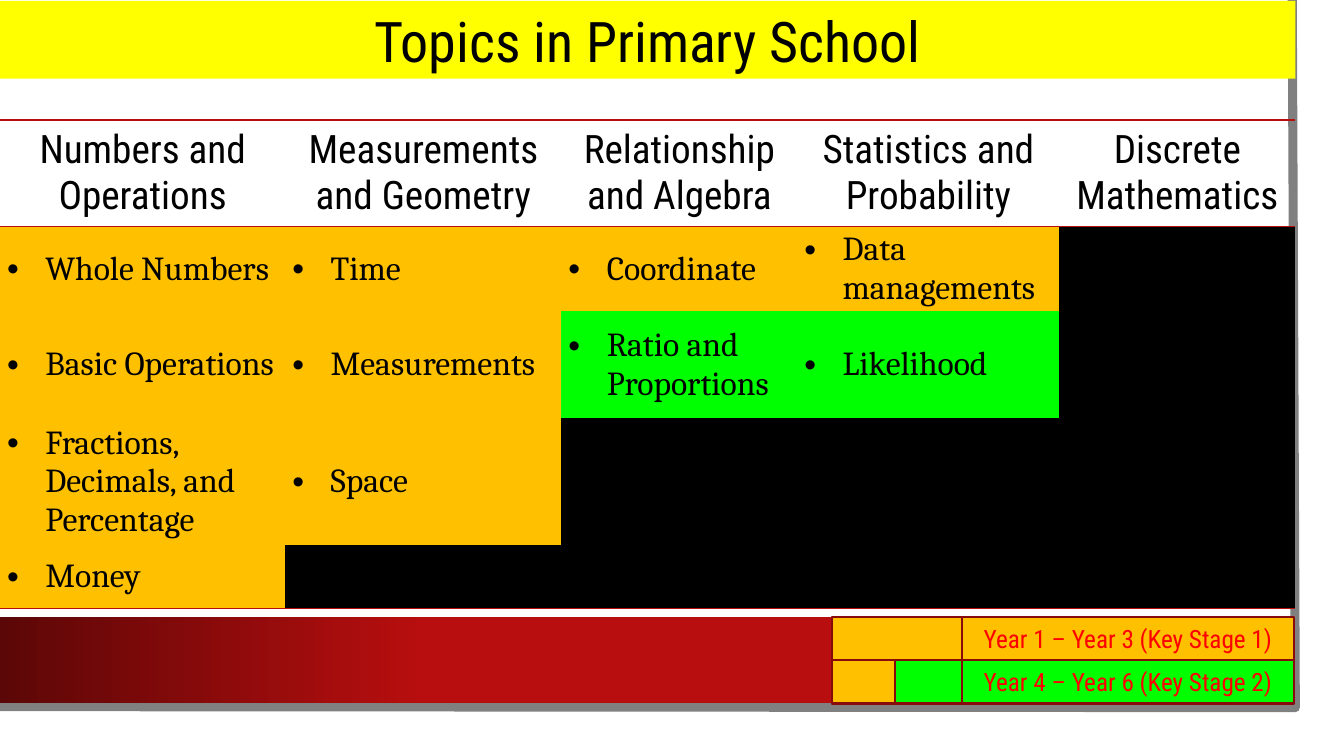
from dataclasses import dataclass

from lxml import etree
from pptx import Presentation
from pptx.dml.color import RGBColor
from pptx.enum.shapes import MSO_SHAPE
from pptx.enum.text import MSO_ANCHOR, PP_ALIGN
from pptx.oxml.ns import qn
from pptx.shapes.autoshape import Shape
from pptx.slide import Slide
from pptx.table import Table, _Cell
from pptx.text.text import TextFrame
from pptx.util import Inches, Length, Pt

RECTANGLE = MSO_SHAPE.RECTANGLE
CENTER, LEFT = PP_ALIGN.CENTER, PP_ALIGN.LEFT
MIDDLE = MSO_ANCHOR.MIDDLE

BLACK = RGBColor(0x00, 0x00, 0x00)
GREY = RGBColor(0x80, 0x80, 0x80)
YELLOW = RGBColor(0xFF, 0xFF, 0x00)
AMBER = RGBColor(0xFF, 0xC0, 0x00)
GREEN = RGBColor(0x00, 0xFF, 0x00)
RED = RGBColor(0xFF, 0x00, 0x00)
CRIMSON = RGBColor(0xB8, 0x0E, 0x0F)
MAROON = RGBColor(0x5C, 0x07, 0x07)
OUTLINE = RGBColor(0x88, 0x0A, 0x0B)

HEADING_FONT, BODY_FONT = "Roboto Condensed", "Cambria"
TITLE_FORMAT = {"name": HEADING_FONT, "size": Pt(40)}
HEADER_FORMAT = {"name": HEADING_FONT, "size": Pt(28)}
TOPIC_FORMAT = {"name": BODY_FONT, "size": Pt(24)}
LEGEND_FORMAT = {"name": HEADING_FONT, "size": Pt(18)}
CELL_FORMAT = {"vertical_anchor": MIDDLE, "margin_left": Inches(0.07),
               "margin_right": Inches(0.07), "margin_top": 0, "margin_bottom": 0}
PLAIN_TABLE_STYLE = "{2D5ABB26-0587-4C30-8999-92F81FD0307C}"

# Grid: ten columns or rows to the inch
GRID_STEP = 0.1
SLIDE_COLUMNS, SLIDE_ROWS = 133.33, 75
PAGE_COLUMNS = 128.5
FOOTER_TOP, LEGEND_ROW = 61.2, 4.3
LEGEND_LEFT, LEGEND_SPLIT = 82.5, 95.4
TOPIC_COLUMNS = [28.3, 27.4, 23.4, 26, 23.4]
TOPIC_ROWS = [10.6, 8.4, 10.6, 12.6, 6.3]


@dataclass(frozen=True)
class Panel:
    left: float
    top: float
    width: float
    height: float
    fill: RGBColor
    outlined: bool = True
    label: str = ""


@dataclass(frozen=True)
class Strand:
    header: str
    topics: tuple[str, ...]
    early: int  # how many topics start in Key Stage 1


STRANDS = [
    Strand("Numbers and Operations",
           ("Whole Numbers", "Basic Operations",
            "Fractions, Decimals, and Percentage", "Money"), 4),
    Strand("Measurements and Geometry", ("Time", "Measurements", "Space"), 3),
    Strand("Relationship and Algebra", ("Coordinate", "Ratio and Proportions"), 1),
    Strand("Statistics and Probability", ("Data managements", "Likelihood"), 1),
    Strand("Discrete Mathematics", (), 0),
]
STAGES = [("Year 1 – Year 3 (Key Stage 1)", AMBER),
          ("Year 4 – Year 6 (Key Stage 2)", GREEN)]


def grid(steps: float) -> Length:
    return Inches(steps * GRID_STEP)


def apply(target: object, values: dict) -> None:
    for name, value in values.items():
        setattr(target, name, value)


def write(frame: TextFrame, text: str, font: dict, color: RGBColor,
          alignment: PP_ALIGN = CENTER, bullet: bool = False) -> None:
    para = frame.paragraphs[0]
    para.alignment = alignment
    if bullet:
        properties = para._p.get_or_add_pPr()
        properties.set("marL", str(Inches(0.38)))
        properties.set("indent", str(-Inches(0.38)))
        etree.SubElement(properties, qn("a:buFont"), typeface="Arial")
        etree.SubElement(properties, qn("a:buChar"), char="•")
    span = para.add_run()
    span.text = text
    apply(span.font, font)
    span.font.color.rgb = color


def add_panel(page: Slide, panel: Panel) -> Shape:
    box = page.shapes.add_shape(RECTANGLE, grid(panel.left), grid(panel.top),
                                grid(panel.width), grid(panel.height))
    box.shadow.inherit = False
    box.fill.solid()
    box.fill.fore_color.rgb = panel.fill
    if panel.outlined:
        box.line.color.rgb = OUTLINE
        box.line.width = Pt(1.5)
    else:
        box.line.fill.background()
    if panel.label:
        apply(box.text_frame, {"word_wrap": True, "vertical_anchor": MIDDLE})
        write(box.text_frame, panel.label, LEGEND_FORMAT, RED)
    return box


def add_page_edge(page: Slide) -> None:
    builder = page.shapes.build_freeform(grid(128.2), 0)
    builder.add_line_segments([(grid(PAGE_COLUMNS), grid(70.2)),
                               (grid(-0.3), grid(70.1))], close=False)
    edge = builder.convert_to_shape()
    edge.shadow.inherit = False
    edge.fill.background()
    edge.line.color.rgb = GREY
    edge.line.width = Pt(6.5)


def add_footer(page: Slide) -> None:
    footer = add_panel(page, Panel(0, FOOTER_TOP, 128, 8.5, CRIMSON, outlined=False))
    footer.fill.gradient()
    footer.fill.gradient_angle = 0
    for stop, position, color in zip(footer.fill.gradient_stops,
                                     (0, 0.33), (MAROON, CRIMSON)):
        stop.position = position
        stop.color.rgb = color


def rule_cell(cell: _Cell, *sides: str) -> None:
    for side in sides:
        line = etree.SubElement(cell._tc.get_or_add_tcPr(), qn(f"a:{side}"),
                                w=str(Pt(1)))
        fill = etree.SubElement(line, qn("a:solidFill"))
        etree.SubElement(fill, qn("a:srgbClr"), val=str(CRIMSON))


def fill_strand(table: Table, column: int, strand: Strand) -> None:
    header = table.cell(0, column)
    apply(header, CELL_FORMAT)
    rule_cell(header, "lnT", "lnB")
    header.fill.background()
    write(header.text_frame, strand.header, HEADER_FORMAT, BLACK)
    last = len(TOPIC_ROWS) - 1
    for row in range(1, last + 1):
        cell = table.cell(row, column)
        apply(cell, CELL_FORMAT)
        if row == last:
            rule_cell(cell, "lnB")
        cell.fill.solid()
        if row > len(strand.topics):
            cell.fill.fore_color.rgb = BLACK
            continue
        cell.fill.fore_color.rgb = AMBER if row <= strand.early else GREEN
        write(cell.text_frame, strand.topics[row - 1], TOPIC_FORMAT, BLACK, LEFT, True)


def add_topic_table(page: Slide) -> None:
    table = page.shapes.add_table(
        len(TOPIC_ROWS), len(STRANDS), 0, grid(11.9),
        grid(sum(TOPIC_COLUMNS)), grid(sum(TOPIC_ROWS))).table
    apply(table, {"first_row": False, "horz_banding": False})
    table._tbl.tblPr.find(qn("a:tableStyleId")).text = PLAIN_TABLE_STYLE
    for row, height in zip(table.rows, TOPIC_ROWS):
        row.height = grid(height)
    for index, (width, strand) in enumerate(zip(TOPIC_COLUMNS, STRANDS)):
        table.columns[index].width = grid(width)
        fill_strand(table, index, strand)


def add_legend(page: Slide) -> None:
    swatch = LEGEND_SPLIT - LEGEND_LEFT
    for index, (label, color) in enumerate(STAGES):
        top = FOOTER_TOP + index * LEGEND_ROW
        add_panel(page, Panel(LEGEND_LEFT, top, swatch, LEGEND_ROW, color))
        add_panel(page, Panel(LEGEND_SPLIT, top, 33, LEGEND_ROW, color, label=label))
    add_panel(page, Panel(LEGEND_LEFT, FOOTER_TOP + LEGEND_ROW, 6.3, LEGEND_ROW, AMBER))


def main() -> None:
    deck = Presentation()
    apply(deck, {"slide_width": grid(SLIDE_COLUMNS), "slide_height": grid(SLIDE_ROWS)})
    page = deck.slides.add_slide(deck.slide_layouts[6])

    # Page edge and footer band
    add_page_edge(page)
    add_footer(page)

    # Topics by strand
    add_topic_table(page)

    # Title banner
    banner = add_panel(page, Panel(0, 0.1, PAGE_COLUMNS, 7.7, YELLOW, outlined=False))
    apply(banner.text_frame, {"word_wrap": True, "vertical_anchor": MIDDLE})
    write(banner.text_frame, "Topics in Primary School", TITLE_FORMAT, BLACK)

    # Key stage legend
    add_legend(page)
    deck.save("out.pptx")


if __name__ == "__main__":
    main()
